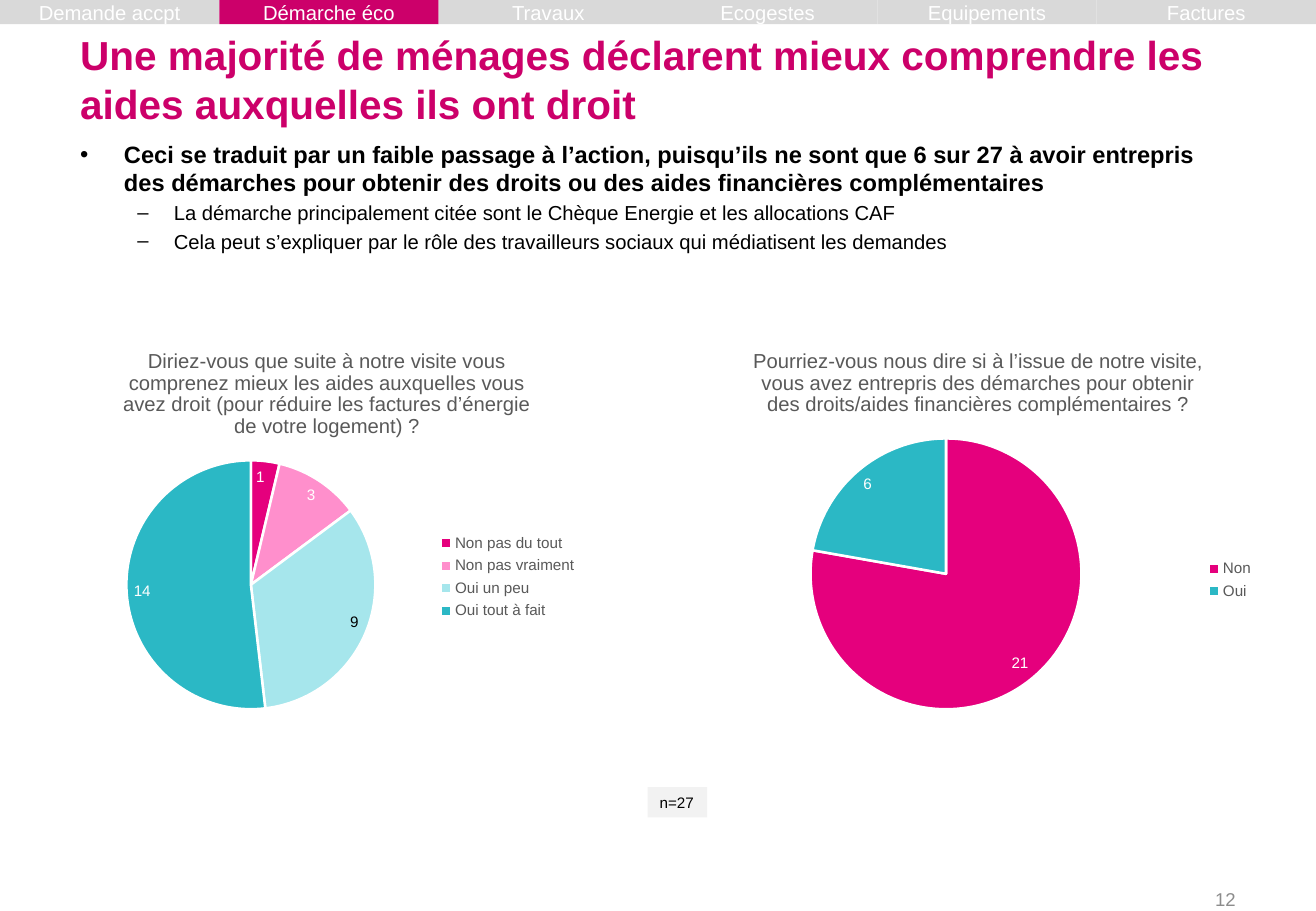
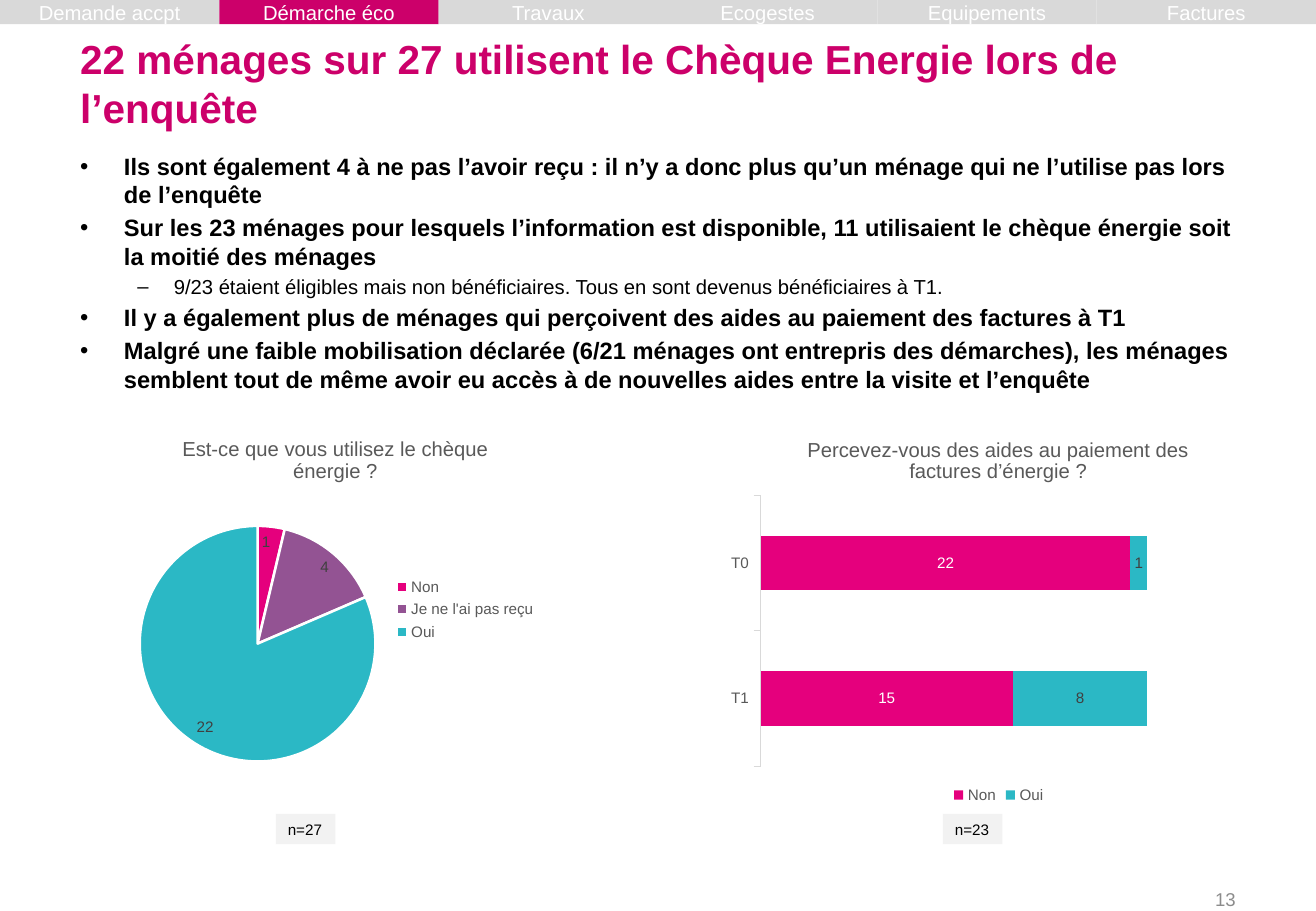
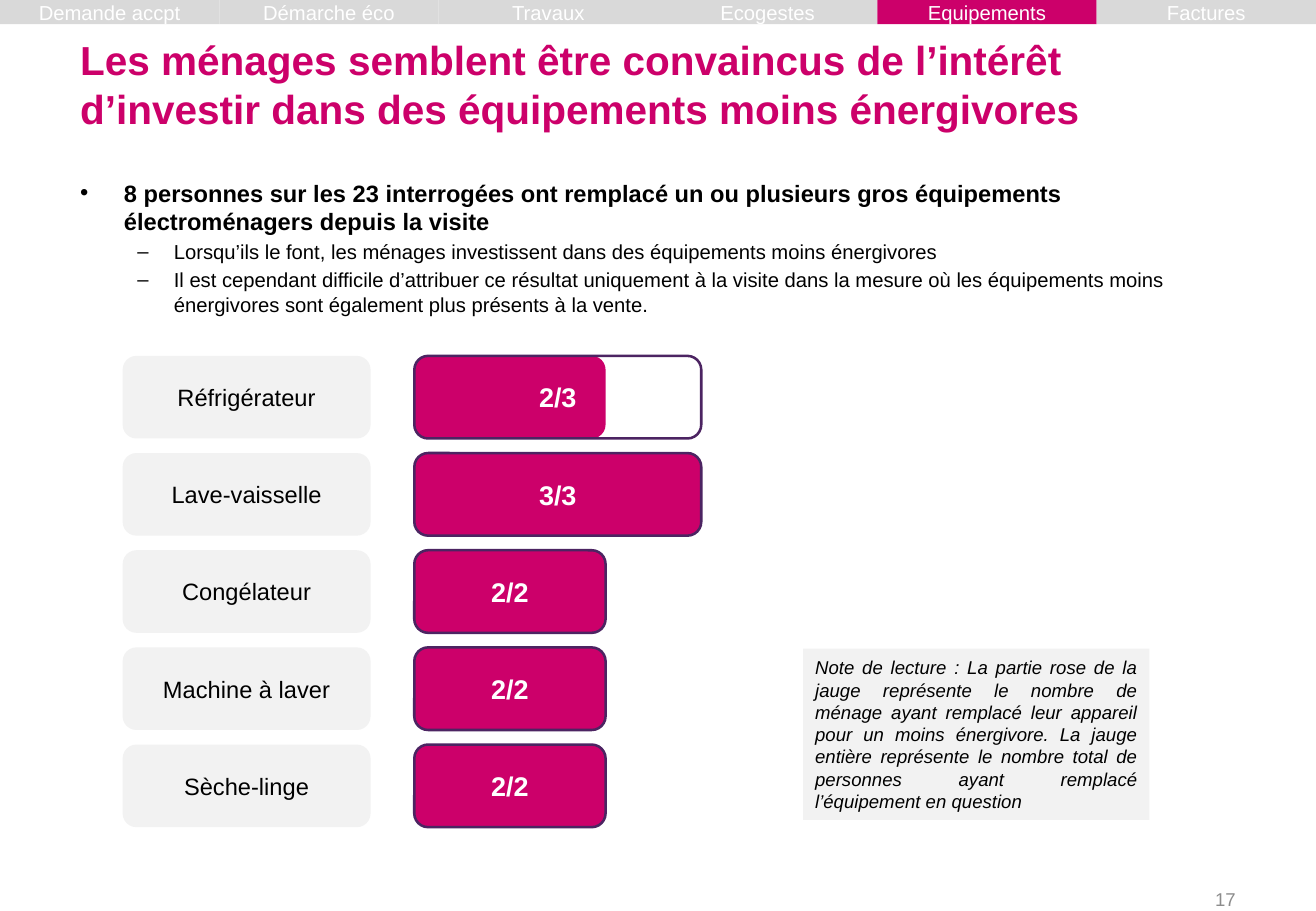
from lxml import etree
from pptx import Presentation
from pptx.chart.data import CategoryChartData
from pptx.dml.color import RGBColor
from pptx.enum.chart import XL_CHART_TYPE as ChartType
from pptx.enum.chart import XL_LABEL_POSITION as LabelPos
from pptx.enum.chart import XL_LEGEND_POSITION as LegendPos
from pptx.enum.chart import XL_TICK_MARK as Tick
from pptx.enum.shapes import MSO_SHAPE as Preset
from pptx.enum.text import MSO_ANCHOR as Anchor
from pptx.enum.text import MSO_AUTO_SIZE as AutoSize
from pptx.enum.text import PP_ALIGN as Align
from pptx.oxml.ns import qn
from pptx.util import Inches, Pt

FONT = "Arial"
SLIDE_W, SLIDE_H = 10.83, 7.5
COLORS = {
    "accent": "CC006A", "tab": "D9D9D9", "panel": "F2F2F2", "outline": "4C2462",
    "white": "FFFFFF", "black": "000000", "page": "8C8C8C", "caption": "595959",
    "label": "404040", "no": "E5007D", "rather_no": "FF8FCC",
    "rather_yes": "A6E6EC", "yes": "2BB8C5", "not_received": "935393",
}
SECTIONS = ["Demande accpt", "Démarche éco", "Travaux", "Ecogestes", "Equipements", "Factures"]
BULLETS = [("•", 0.36, -0.36, 14, True), ("–", 0.77, -0.3, 12, False)]


def rgb(name):
    """Return the palette colour called name."""
    return RGBColor.from_string(COLORS[name])


def set_font(font, size, color, bold=False, italic=False):
    """Apply the deck typeface with the given look."""
    font.name, font.size, font.bold, font.italic = FONT, Pt(size), bold, italic
    font.color.rgb = rgb(color)


def set_frame(frame, inset=(0.1, 0.05), anchor=Anchor.TOP, wrap=True):
    """Set the insets, anchor and wrapping of a text frame."""
    frame.margin_left = frame.margin_right = Inches(inset[0])
    frame.margin_top = frame.margin_bottom = Inches(inset[1])
    frame.vertical_anchor, frame.word_wrap = anchor, wrap
    frame.auto_size = AutoSize.NONE


def add_block(shapes, box, preset=Preset.RECTANGLE, fill=None, line=None, text="",
              size=12, color="black", align=Align.CENTER, inset=(0.1, 0.05),
              anchor=Anchor.MIDDLE, wrap=True, **style):
    """Add a preset shape with optional fill, outline and one paragraph."""
    block = shapes.add_shape(preset, *map(Inches, box))
    block.shadow.inherit = False
    if fill:
        block.fill.solid()
        block.fill.fore_color.rgb = rgb(fill)
    else:
        block.fill.background()
    if line:
        block.line.color.rgb = rgb(line)
        block.line.width = Pt(1.5)
    else:
        block.line.fill.background()
    if text:
        set_frame(block.text_frame, inset, anchor, wrap)
        paragraph = block.text_frame.paragraphs[0]
        paragraph.text, paragraph.alignment = text, align
        set_font(paragraph.font, size, color, **style)


def add_section_band(slide, active):
    """Draw the row of section tabs, with the active one highlighted."""
    width = SLIDE_W / len(SECTIONS)
    for i, section in enumerate(SECTIONS):
        add_block(slide.shapes, (i * width, 0, width, 0.2), text=section, color="white",
                  fill="accent" if section == active else "tab", inset=(0, 0))


def add_page(deck, title, title_top, section, number):
    """Add a slide with its title, section band and page number."""
    slide = deck.slides.add_slide(deck.slide_layouts[5])
    heading = slide.shapes.title
    heading.left, heading.top, heading.width, heading.height = map(
        Inches, (0.54, title_top, 9.75, 0.94))
    set_frame(heading.text_frame, (0.12, 0.06), Anchor.BOTTOM)
    paragraph = heading.text_frame.paragraphs[0]
    paragraph.text, paragraph.alignment = title, Align.LEFT
    set_font(paragraph.font, 24, "accent", bold=True)
    add_section_band(slide, section)
    page = slide.shapes.add_textbox(*map(Inches, (7.76, 7.25, 2.53, 0.3)))
    set_frame(page.text_frame, (0.12, 0.06), Anchor.MIDDLE)
    paragraph = page.text_frame.paragraphs[0]
    paragraph.text, paragraph.alignment = str(number), Align.RIGHT
    set_font(paragraph.font, 11, "page")
    return slide


def add_findings(slide, top, height, findings):
    """Write the two-level bullet list from (level, text) pairs."""
    body = slide.shapes.add_textbox(*map(Inches, (0.54, top, 9.75, height)))
    frame = body.text_frame
    set_frame(frame, (0.12, 0.06))
    for i, (level, text) in enumerate(findings):
        paragraph = frame.add_paragraph() if i else frame.paragraphs[0]
        paragraph.text, paragraph.level = text, level
        mark, margin, indent, size, bold = BULLETS[level]
        props = paragraph._p.get_or_add_pPr()
        props.set("marL", str(Inches(margin)))
        props.set("indent", str(Inches(indent)))
        etree.SubElement(props, qn("a:buFont")).set("typeface", FONT)
        etree.SubElement(props, qn("a:buChar")).set("char", mark)
        if i:
            paragraph.space_before = Pt(0.2 * size)
        set_font(paragraph.font, size, "black", bold=bold)


def add_sample(slide, left, top, text):
    """Add the small tag that gives the sample size."""
    add_block(slide.shapes, (left, top, 0.49, 0.25), fill="panel", text=text, size=9,
              align=Align.LEFT, anchor=Anchor.TOP, wrap=False)


def set_layout(element, index, **values):
    """Give a chart part a manual layout at the index among its children."""
    for previous in element.findall(qn("c:layout")):
        element.remove(previous)
    layout = etree.Element(qn("c:layout"))
    manual = etree.SubElement(layout, qn("c:manualLayout"))
    for tag, value in values.items():
        etree.SubElement(manual, qn("c:" + tag)).set("val", str(value))
    element.insert(index, layout)


def add_survey_chart(slide, kind, box, question, categories, series, plot, legend, legend_pos):
    """Add a titled chart; plot and legend are offsets in inches inside the box."""
    data = CategoryChartData(number_format="0")
    data.categories = categories
    for name, values in series:
        data.add_series(name, values)
    chart = slide.shapes.add_chart(kind, *map(Inches, box), data).chart
    set_font(chart.font, 10, "black")
    chart.has_title = True
    paragraph = chart.chart_title.text_frame.paragraphs[0]
    paragraph.text = question
    set_font(paragraph.font, 12, "caption")
    chart.has_legend = True
    chart.legend.position = legend_pos
    chart.legend.include_in_layout = False
    set_font(chart.legend.font, 9, "caption")
    width, height = box[2:]
    x, y, w, h = plot
    set_layout(chart._chartSpace.chart.plotArea, 0, layoutTarget="inner",
               xMode="edge", yMode="edge", x=round(x / width, 4), y=round(y / height, 4),
               w=round(w / width, 4), h=round(h / height, 4))
    set_layout(chart.legend._element, 1, xMode="edge", yMode="edge",
               x=round(legend[0] / width, 4), y=round(legend[1] / height, 4))
    return chart


def add_labels(target, position, color):
    """Show the values of a series in the given colour."""
    labels = target.data_labels
    labels.show_value, labels.position = True, position
    labels.number_format, labels.number_format_is_linked = "0", False
    set_font(labels.font, 9, color)


def add_pie(slide, box, question, answers, plot, legend, label="white", dark=()):
    """Add a pie from (answer, count, colour) rows; dark lists black labels."""
    categories, counts, colors = zip(*answers)
    chart = add_survey_chart(slide, ChartType.PIE, box, question, categories,
                             [("Series 1", counts)], plot, legend, LegendPos.RIGHT)
    chart.plots[0].vary_by_categories = True
    pie = chart.plots[0].series[0]
    add_labels(pie, LabelPos.INSIDE_END, label)
    for i, color in enumerate(colors):
        point = pie.points[i]
        point.format.fill.solid()
        point.format.fill.fore_color.rgb = rgb(color)
        point.format.line.color.rgb = rgb("white")
        point.format.line.width = Pt(1.5)
    for i in dark:
        set_font(pie.points[i].data_label.font, 9, "black")
        pie.points[i].data_label.position = LabelPos.INSIDE_END


def add_stacked_bars(slide, box, question, categories, answers, plot, legend):
    """Add stacked bars from (answer, counts, colour, label colour) rows."""
    chart = add_survey_chart(slide, ChartType.BAR_STACKED, box, question, categories,
                             [row[:2] for row in answers], plot, legend, LegendPos.BOTTOM)
    bars = chart.plots[0]
    bars.vary_by_categories, bars.gap_width, bars.overlap = False, 150, 100
    for answer, (_, _, color, label) in zip(bars.series, answers):
        answer.format.fill.solid()
        answer.format.fill.fore_color.rgb = rgb(color)
        add_labels(answer, LabelPos.CENTER, label)
    counts = chart.value_axis
    counts.visible = counts.has_major_gridlines = False
    counts.minimum_scale, counts.maximum_scale = 0, 30
    periods = chart.category_axis
    periods.major_tick_mark, periods.minor_tick_mark = Tick.OUTSIDE, Tick.NONE
    periods.format.line.color.rgb = rgb("tab")
    periods.format.line.width = Pt(0.75)
    set_font(periods.tick_labels.font, 9, "caption")


def add_gauge(slide, left, top, appliance, efficient, replaced):
    """Add an appliance label and its gauge of efficient replacements."""
    shapes = slide.shapes.add_group_shape().shapes
    height, unit, gauge_left = 0.68, 0.787, left + 2.4
    add_block(shapes, (left, top, 2.04, height), Preset.ROUNDED_RECTANGLE,
              fill="panel", text=appliance, size=14)
    add_block(shapes, (gauge_left, top, efficient * unit, height),
              Preset.ROUNDED_RECTANGLE, fill="accent")
    add_block(shapes, (gauge_left, top, replaced * unit, height),
              Preset.ROUNDED_RECTANGLE, line="outline", text=f"{efficient}/{replaced}",
              size=16, color="white", bold=True)


def build_rights(deck):
    """Build the slide on understanding of the available aids."""
    slide = add_page(
        deck, "Une majorité de ménages déclarent mieux comprendre les aides auxquelles ils ont droit",
        0.17, "Démarche éco", 12)
    add_findings(slide, 1.09, 1.07, [
        (0, "Ceci se traduit par un faible passage à l’action, puisqu’ils ne sont que 6 sur 27 à avoir "
            "entrepris des démarches pour obtenir des droits ou des aides financières complémentaires"),
        (1, "La démarche principalement citée sont le Chèque Energie et les allocations CAF"),
        (1, "Cela peut s’expliquer par le rôle des travailleurs sociaux qui médiatisent les demandes"),
    ])
    add_pie(slide, (0.54, 2.72, 4.3, 3.25),
            "Diriez-vous que suite à notre visite vous comprenez mieux les aides auxquelles vous "
            "avez droit (pour réduire les factures d’énergie de votre logement) ?",
            [("Non pas du tout", 1, "no"), ("Non pas vraiment", 3, "rather_no"),
             ("Oui un peu", 9, "rather_yes"), ("Oui tout à fait", 14, "yes")],
            plot=(0.5, 1.07, 2.05, 2.05), legend=(3.05, 1.64), dark=(2,))
    add_pie(slide, (5.68, 2.72, 4.74, 3.25),
            "Pourriez-vous nous dire si à l’issue de notre visite, vous avez entrepris des démarches "
            "pour obtenir des droits/aides financières complémentaires ?",
            [("Non", 21, "no"), ("Oui", 6, "yes")],
            plot=(0.99, 0.89, 2.23, 2.23), legend=(4.23, 1.85))
    add_sample(slide, 5.33, 6.48, "n=27")


def build_energy_voucher(deck):
    """Build the slide on the use of the energy voucher."""
    slide = add_page(deck, "22 ménages sur 27 utilisent le Chèque Energie lors de l’enquête",
                     0.2, "Démarche éco", 13)
    add_findings(slide, 1.19, 2.15, [
        (0, "Ils sont également 4 à ne pas l’avoir reçu : il n’y a donc plus qu’un ménage qui ne "
            "l’utilise pas lors de l’enquête"),
        (0, "Sur les 23 ménages pour lesquels l’information est disponible, 11 utilisaient le chèque "
            "énergie soit la moitié des ménages"),
        (1, "9/23 étaient éligibles mais non bénéficiaires. Tous en sont devenus bénéficiaires à T1."),
        (0, "Il y a également plus de ménages qui perçoivent des aides au paiement des factures à T1"),
        (0, "Malgré une faible mobilisation déclarée (6/21 ménages ont entrepris des démarches), les "
            "ménages semblent tout de même avoir eu accès à de nouvelles aides entre la visite et l’enquête"),
    ])
    add_stacked_bars(slide, (5.92, 3.45, 4.59, 3.22),
                     "Percevez-vous des aides au paiement des factures d’énergie ?", ["T1", "T0"],
                     [("Non", (15, 22), "no", "white"), ("Oui", (8, 1), "yes", "label")],
                     plot=(0.34, 0.63, 4.15, 2.23), legend=(1.89, 3.01))
    add_pie(slide, (1.01, 3.45, 3.5, 3.13), "Est-ce que vous utilisez le chèque énergie ?",
            [("Non", 1, "no"), ("Je ne l'ai pas reçu", 4, "not_received"), ("Oui", 22, "yes")],
            plot=(0.14, 0.88, 1.94, 1.94), legend=(2.22, 1.27), label="label")
    add_sample(slide, 2.27, 6.7, "n=27")
    add_sample(slide, 7.76, 6.7, "n=23")


def build_appliances(deck):
    """Build the slide on replaced household appliances."""
    slide = add_page(
        deck, "Les ménages semblent être convaincus de l’intérêt d’investir dans des équipements "
        "moins énergivores", 0.21, "Equipements", 17)
    add_findings(slide, 1.41, 1.28, [
        (0, "8 personnes sur les 23 interrogées ont remplacé un ou plusieurs gros équipements "
            "électroménagers depuis la visite"),
        (1, "Lorsqu’ils le font, les ménages investissent dans des équipements moins énergivores"),
        (1, "Il est cependant difficile d’attribuer ce résultat uniquement à la visite dans la mesure où "
            "les équipements moins énergivores sont également plus présents à la vente."),
    ])
    gauges = [("Réfrigérateur", 2, 3), ("Lave-vaisselle", 3, 3), ("Congélateur", 2, 2),
              ("Machine à laver", 2, 2), ("Sèche-linge", 2, 2)]
    for i, gauge in enumerate(gauges):
        add_gauge(slide, 1.01, 2.93 + i * 0.8, *gauge)
    add_block(slide.shapes, (6.61, 5.34, 2.85, 1.41), fill="panel", size=11, italic=True,
              align=Align.JUSTIFY,
              text="Note de lecture : La partie rose de la jauge représente le nombre de ménage ayant "
                   "remplacé leur appareil pour un moins énergivore. La jauge entière représente le "
                   "nombre total de personnes ayant remplacé l’équipement en question")


def main():
    """Build and save the deck."""
    deck = Presentation()
    deck.slide_width, deck.slide_height = Inches(SLIDE_W), Inches(SLIDE_H)
    build_rights(deck)
    build_energy_voucher(deck)
    build_appliances(deck)
    deck.save("out.pptx")


if __name__ == "__main__":
    main()
